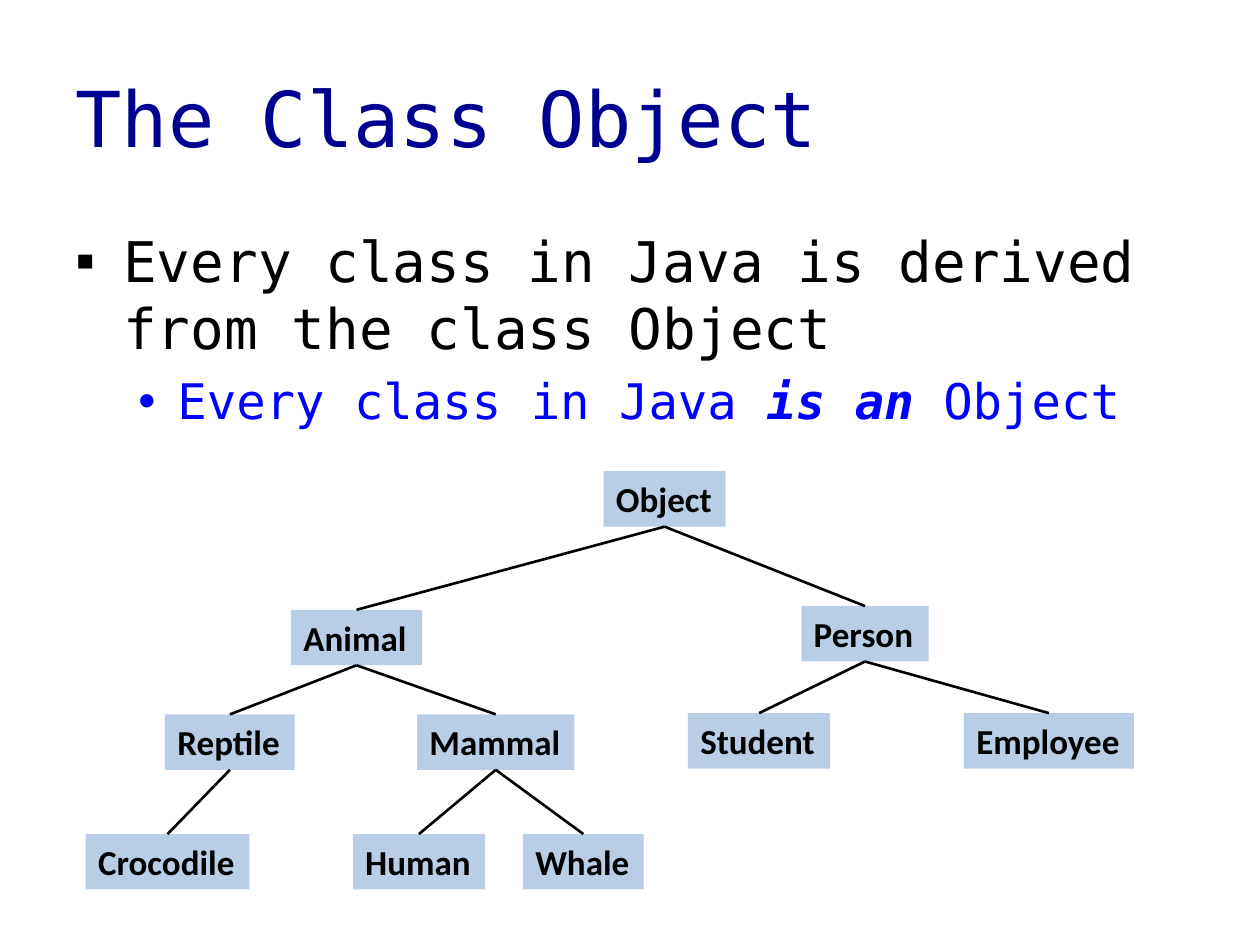
from dataclasses import dataclass

from lxml import etree
from pptx import Presentation
from pptx.dml.color import RGBColor
from pptx.enum import shapes, text
from pptx.oxml import ns
from pptx.util import Inches, Pt

MONO = "DejaVu Sans Mono"
HIGH = 0.44


@dataclass
class Node:
    name: str
    left: float
    top: float
    width: float
    base: str = ""


NODES = [
    Node("Object", 4.79, 3.74, 0.97),
    Node("Animal", 2.31, 4.84, 1.04, "Object"),
    Node("Person", 6.36, 4.81, 1.01, "Object"),
    Node("Reptile", 1.31, 5.67, 1.03, "Animal"),
    Node("Mammal", 3.31, 5.67, 1.25, "Animal"),
    Node("Student", 5.46, 5.66, 1.13, "Person"),
    Node("Employee", 7.65, 5.66, 1.35, "Person"),
    Node("Crocodile", 0.68, 6.62, 1.3, "Reptile"),
    Node("Human", 2.8, 6.62, 1.05, "Mammal"),
    Node("Whale", 4.15, 6.62, 0.96, "Mammal"),
]


def color(code: str) -> RGBColor:
    return RGBColor.from_string(code)


def write(para, words: str, *, size: float, font: str = MONO,
          ink: str = "000000", bold: bool = False, slant: bool = False) -> None:
    run = para.add_run()
    run.text = words
    run.font.name = font
    run.font.size = Pt(size)
    run.font.bold = bold
    run.font.italic = slant
    run.font.color.rgb = color(ink)


def bullet(para, mark: str, left: float, hang: float) -> None:
    """Give the paragraph a bullet and a hanging indent in inches."""
    props = para._p.get_or_add_pPr()
    props.set("marL", str(Inches(left)))
    props.set("indent", str(-Inches(hang)))
    etree.SubElement(props, ns.qn("a:buFont"), typeface="Arial")
    etree.SubElement(props, ns.qn("a:buChar"), char=mark)


def add_frame(slide, left: float, top: float, width: float, height: float):
    box = slide.shapes.add_textbox(
        Inches(left), Inches(top), Inches(width), Inches(height))
    box.text_frame.word_wrap = True
    return box.text_frame


def add_node(slide, node: Node):
    box = slide.shapes.add_shape(
        shapes.MSO_SHAPE.RECTANGLE, Inches(node.left), Inches(node.top),
        Inches(node.width), Inches(HIGH))
    box.shadow.inherit = False
    box.fill.solid()
    box.fill.fore_color.rgb = color("B9CDE5")
    box.line.fill.background()
    frame = box.text_frame
    frame.word_wrap = False
    frame.auto_size = text.MSO_AUTO_SIZE.SHAPE_TO_FIT_TEXT
    frame.vertical_anchor = text.MSO_ANCHOR.TOP
    para = frame.paragraphs[0]
    para.alignment = text.PP_ALIGN.LEFT
    write(para, node.name, size=20, font="Calibri", bold=True)
    return box


def add_link(slide, upper, lower) -> None:
    """Join the bottom of one box to the top of another."""
    line = slide.shapes.add_connector(shapes.MSO_CONNECTOR.STRAIGHT, 0, 0, 0, 0)
    line.begin_connect(upper, 2)
    line.end_connect(lower, 0)
    line.line.color.rgb = color("000000")
    line.line.width = Pt(1.5)
    etree.SubElement(line._element.spPr, ns.qn("a:effectLst"))


def main() -> None:
    deck = Presentation()
    deck.slide_width, deck.slide_height = Inches(10), Inches(7.5)
    slide = deck.slides.add_slide(deck.slide_layouts[6])

    title = add_frame(slide, 0.5, 0.3, 9, 1.25)
    title.vertical_anchor = text.MSO_ANCHOR.MIDDLE
    write(title.paragraphs[0], "The Class Object", size=44, ink="000090")

    body = add_frame(slide, 0.5, 1.75, 9, 4.95)
    main_point = body.paragraphs[0]
    main_point.space_before = Pt(12.2)
    bullet(main_point, "▪", 0.38, 0.38)
    write(main_point, "Every class in Java is derived from the class Object",
          size=32)

    detail = body.add_paragraph()
    detail.level = 1
    detail.space_before, detail.space_after = Pt(5.6), Pt(6)
    bullet(detail, "•", 0.81, 0.31)
    for words, strong in (("Every class in Java ", False), ("is an", True),
                          (" Object", False)):
        write(detail, words, size=28, ink="0000FF", bold=strong, slant=strong)

    boxes = {node.name: add_node(slide, node) for node in NODES}
    for node in NODES:
        if node.base:
            add_link(slide, boxes[node.base], boxes[node.name])

    deck.save("out.pptx")


if __name__ == "__main__":
    main()
